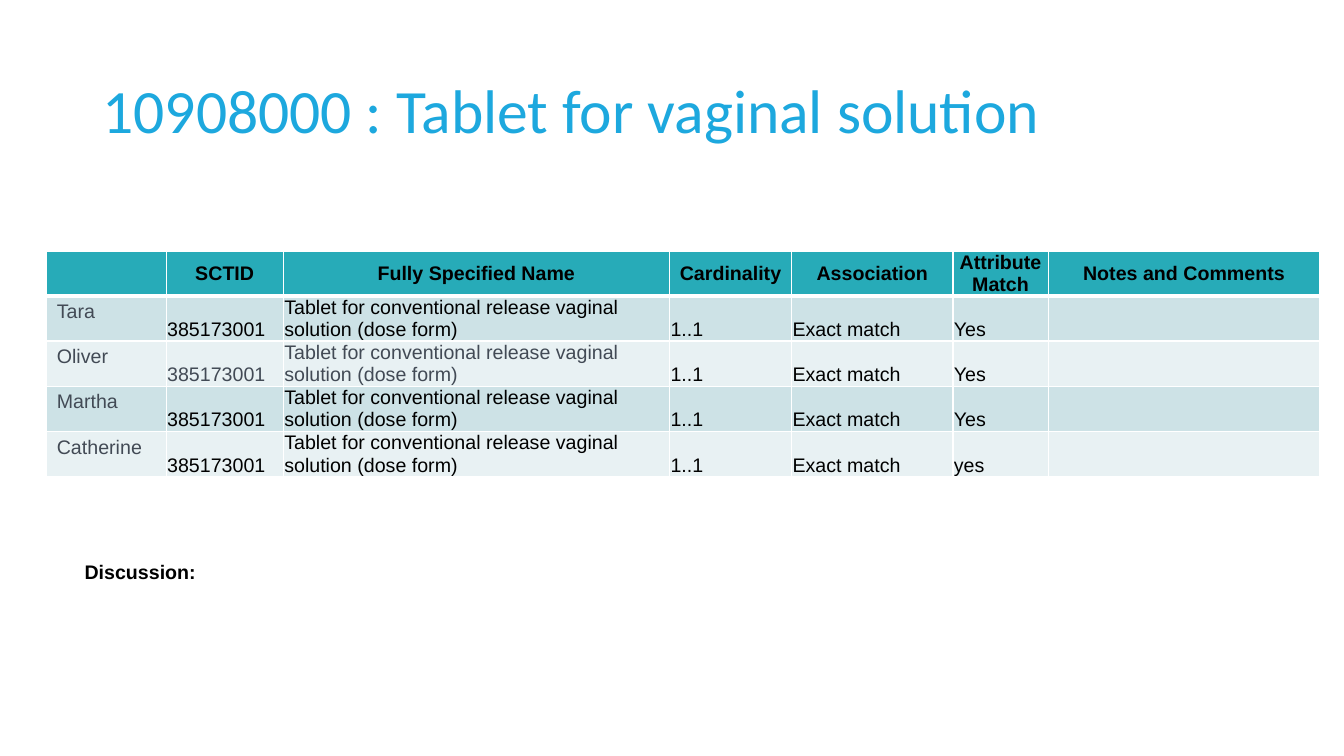
"""Build the slide comparing reviewers' mappings of the vaginal solution tablet."""
import pptx
import pptx.dml.color
import pptx.enum.text
import pptx.oxml
import pptx.oxml.ns
import pptx.util

Pt = pptx.util.Pt
Align = pptx.enum.text.PP_ALIGN
Anchor = pptx.enum.text.MSO_ANCHOR

THEME = {
    "title": "1DA8DE", "header": "27ABB8", "bands": ("CDE2E6", "E8F1F3"),
    "grid": "FFFFFF", "ink": "000000", "muted": "424A55",
    "title_size": 44, "body_size": 14,
    "title_font": "Calibri", "body_font": "Arial",
}


def write(frame, text, color, size=THEME["body_size"], name=THEME["body_font"], bold=False, align=Align.LEFT):
    """Put one formatted paragraph in a text frame and return it."""
    para = frame.paragraphs[0]
    para.alignment = align
    span = para.add_run()
    span.text = text
    span.font.color.rgb = pptx.dml.color.RGBColor.from_string(color)
    for key, value in {"size": Pt(size), "name": name, "bold": bold}.items():
        setattr(span.font, key, value)
    return para


def add_border(cell, side, width):
    """Draw one side of a table cell in the grid colour."""
    border = pptx.oxml.parse_xml(
        f'<a:{side} {pptx.oxml.ns.nsdecls("a")} w="{Pt(width)}"><a:solidFill>'
        f'<a:srgbClr val="{THEME["grid"]}"/></a:solidFill></a:{side}>')
    cell._tc.get_or_add_tcPr().append(border)


deck = pptx.Presentation()
deck.slide_width, deck.slide_height = Pt(960), Pt(540)
page = deck.slides.add_slide(deck.slide_layouts[5])

title = page.shapes.title
for key, value in {"left": 66, "top": 28.8, "width": 828, "height": 104.4}.items():
    setattr(title, key, Pt(value))
title.text_frame.vertical_anchor = Anchor.MIDDLE
title.text_frame.word_wrap = True
heading = write(title.text_frame, "10908000 : Tablet for vaginal solution", THEME["title"],
                THEME["title_size"], THEME["title_font"])
heading.line_spacing = 0.9

headers = ["", "SCTID", "Fully Specified Name", "Cardinality", "Association",
           "Attribute Match", "Notes and Comments"]
mapping = ["385173001", "Tablet for conventional release vaginal solution (dose form)",
           "1..1", "Exact match"]
reviews = [("Tara", "Yes"), ("Oliver", "Yes"), ("Martha", "Yes"), ("Catherine", "yes")]
rows = [headers] + [[reviewer, *mapping, match, ""] for reviewer, match in reviews]
widths = [85.3, 83.7, 275.9, 87.2, 115.2, 68.1, 194.1]
row_height = 30.24

table = page.shapes.add_table(len(rows), len(widths), Pt(33.4), Pt(179.3),
                              Pt(sum(widths)), Pt(row_height * len(rows))).table
for column, width in zip(table.columns, widths):
    column.width = Pt(width)

for row_index, values in enumerate(rows):
    is_header = row_index == 0
    fill = THEME["header"] if is_header else THEME["bands"][(row_index - 1) % 2]
    top_width = 3 if row_index == 1 else 1
    bottom_width = 3 if is_header else 1
    for column_index, text in enumerate(values):
        cell = table.cell(row_index, column_index)
        for side, width in {"lnL": 1, "lnR": 1, "lnT": top_width, "lnB": bottom_width}.items():
            add_border(cell, side, width)
        cell.fill.solid()
        cell.fill.fore_color.rgb = pptx.dml.color.RGBColor.from_string(fill)
        if not text:
            continue
        if column_index > 0:
            cell.vertical_anchor = Anchor.MIDDLE if is_header else Anchor.BOTTOM
            for side, margin in {"left": 0.7, "top": 0.7, "right": 0.7, "bottom": 0}.items():
                setattr(cell, f"margin_{side}", Pt(margin))
        is_muted = not is_header and (column_index == 0 or (values[0] == "Oliver" and column_index < 3))
        write(cell.text_frame, text, THEME["muted"] if is_muted else THEME["ink"],
              bold=is_header, align=Align.CENTER if is_header else Align.LEFT)

discussion = page.shapes.add_textbox(Pt(53.3), Pt(396.7), Pt(850.7), Pt(41))
discussion.text_frame.word_wrap = True
write(discussion.text_frame, "Discussion:", THEME["ink"], bold=True)

deck.save("out.pptx")
